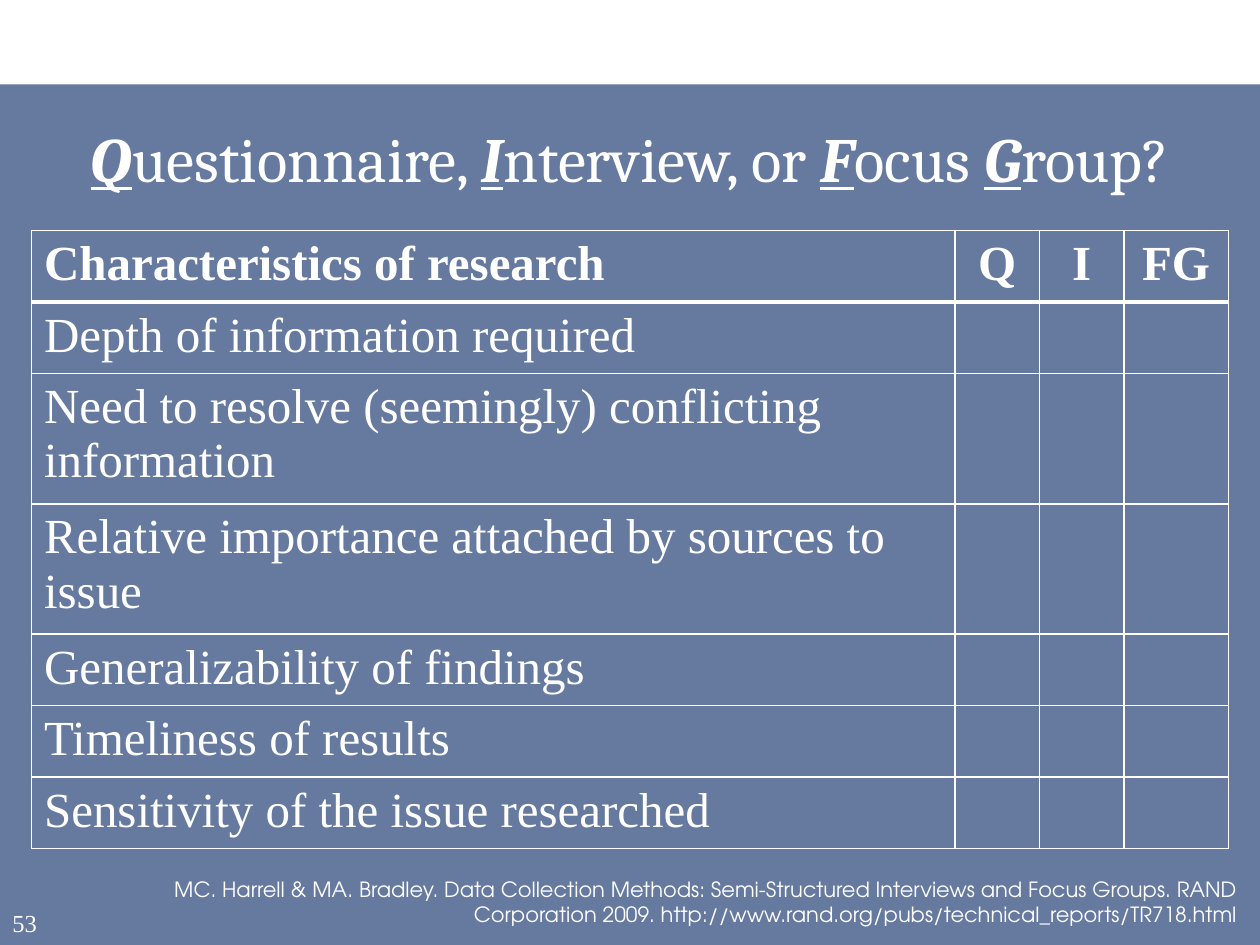
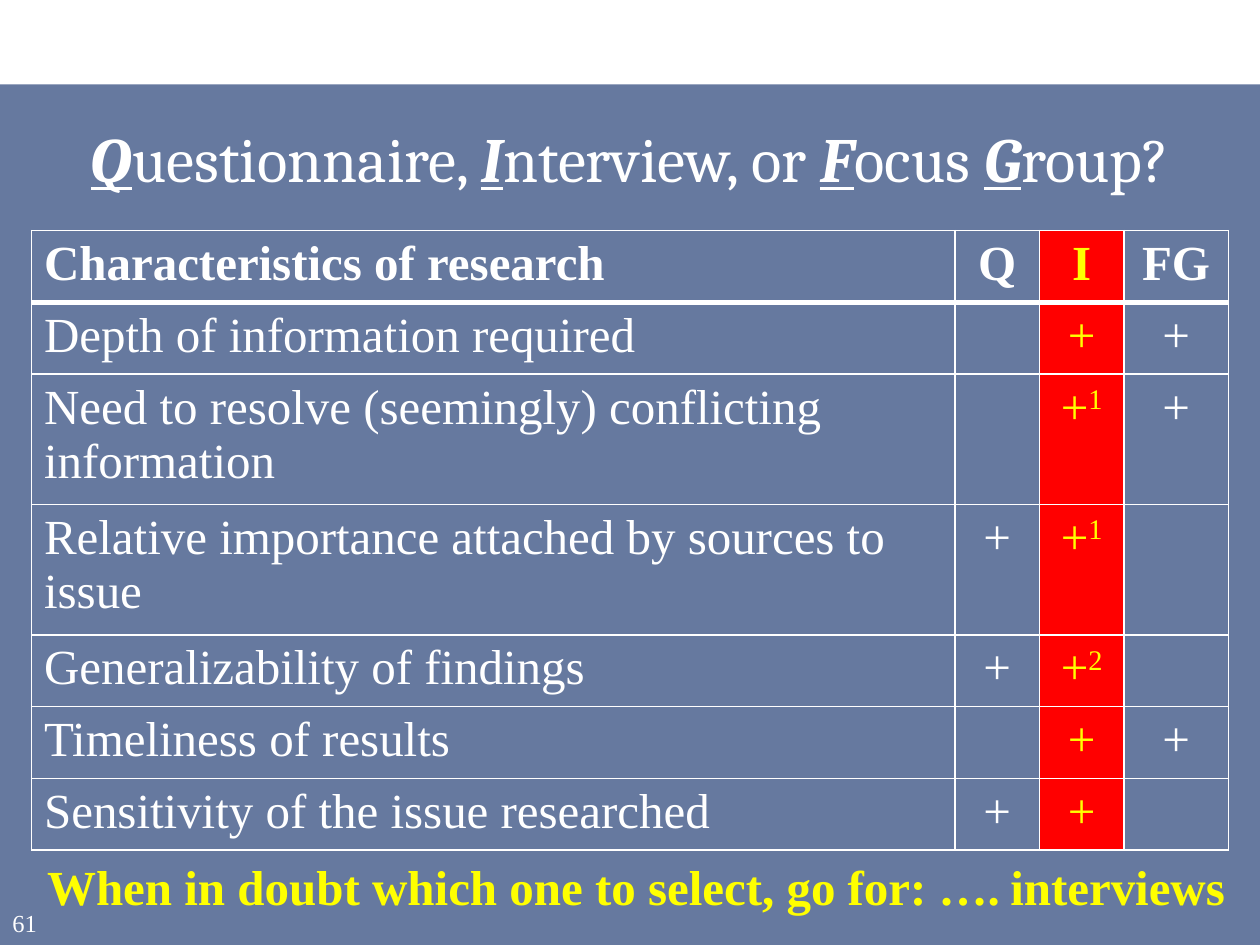
from lxml.etree import SubElement
from pptx import Presentation
from pptx.dml.color import RGBColor
from pptx.enum.shapes import MSO_SHAPE as SHAPE
from pptx.enum.text import MSO_ANCHOR as ANCHOR, PP_ALIGN as ALIGN
from pptx.oxml.ns import qn
from pptx.util import Inches, Pt

WHITE, YELLOW, RED, NAVY = "FFFFFF", "FFFF00", "FF0000", "002060"
SERIF, TITLE_FONT, SOURCE_FONT = "Times New Roman", "Cambria", "TeX Gyre Adventor"
TITLE = "*Q*uestionnaire, *I*nterview, or *F*ocus *G*roup?"
HEADER = ("Characteristics of research", "Q", "I", "FG")
TOPICS = (
    "Depth of information required",
    "Need to resolve (seemingly) conflicting information",
    "Relative importance attached by sources to issue",
    "Generalizability of findings",
    "Timeliness of results",
    "Sensitivity of the issue researched",
)
SCORES = (
    ("", "+", "+"),
    ("", "+^1", "+"),
    ("+", "+^1", ""),
    ("+", "+^2", ""),
    ("", "+", "+"),
    ("+", "+", ""),
)
COL_WIDTHS = (7.33, 0.67, 0.67, 0.83)
INTERVIEW_COL = 2
SOURCE = ("MC. Harrell & MA. Bradley. Data Collection Methods: Semi-Structured "
          "Interviews and Focus Groups. RAND Corporation 2009. "
          "http://www.rand.org/pubs/technical_reports/TR718.html")


def rgb(value):
    """Turn a hex string into a colour."""
    return RGBColor.from_string(value)


class Deck:
    """Hold the presentation style and the current slide."""

    def __init__(self):
        """Start an empty 10 by 7.5 inch presentation."""
        self.prs = Presentation()
        self.prs.slide_width, self.prs.slide_height = Inches(10), Inches(7.5)

    def slide(self, number):
        """Add a slide with its band, page number and title."""
        self.s = self.prs.slides.add_slide(self.prs.slide_layouts[6])
        self.band()
        self.text(str(number), 0, 7.16, 0.6, 0.34, size=14)
        self.title()

    def band(self):
        """Draw the translucent panel below the white strip."""
        sp = self.s.shapes.add_shape(SHAPE.RECTANGLE, 0, Inches(0.67), Inches(10), Inches(6.83))
        sp.shadow.inherit = False
        sp.fill.solid()
        sp.fill.fore_color.rgb = rgb(NAVY)
        color = sp._element.spPr.find(qn("a:solidFill"))[0]
        SubElement(color, qn("a:alpha"), val="60000")
        sp.line.fill.background()

    def font(self, p, size, color=WHITE, name=SERIF, bold=False):
        """Set the font of a whole paragraph."""
        f = p.font
        f.size, f.name, f.bold = Pt(size), name, bold
        f.color.rgb = rgb(color)

    def text(self, text, x, y, w, h, size, color=WHITE, name=SERIF, bold=False,
             align=ALIGN.LEFT, wrap=True):
        """Add a one-paragraph text box and return its frame."""
        tf = self.s.shapes.add_textbox(Inches(x), Inches(y), Inches(w), Inches(h)).text_frame
        tf.word_wrap = wrap
        p = tf.paragraphs[0]
        p.text, p.alignment = text, align
        self.font(p, size, color, name, bold)
        return tf

    def title(self):
        """Add the title with its starred initials emphasised."""
        tf = self.text("", 0, 0.83, 10, 0.83, 36, name=TITLE_FONT, align=ALIGN.CENTER)
        tf.vertical_anchor = ANCHOR.MIDDLE
        for i, part in enumerate(TITLE.split("*")):
            if part:
                r = tf.paragraphs[0].add_run()
                r.text = part
                if i % 2:
                    r.font.bold = r.font.italic = r.font.underline = True

    def borders(self, cell, top, bottom):
        """Give a cell white borders, with top and bottom widths in points."""
        tcPr = cell._tc.get_or_add_tcPr()
        for side, width in (("L", 1), ("R", 1), ("T", top), ("B", bottom)):
            ln = SubElement(tcPr, qn(f"a:ln{side}"), w=str(Pt(width)))
            SubElement(SubElement(ln, qn("a:solidFill")), qn("a:srgbClr"), val=WHITE)

    def cell(self, cell, text, row, col, highlight):
        """Fill one cell, raising whatever follows a caret."""
        self.borders(cell, 3 if row == 1 else 1, 3 if row == 0 else 1)
        if highlight:
            cell.fill.solid()
            cell.fill.fore_color.rgb = rgb(RED)
        else:
            cell.fill.background()
        p = cell.text_frame.paragraphs[0]
        p.alignment = ALIGN.CENTER if col else ALIGN.LEFT
        self.font(p, 28, YELLOW if highlight else WHITE, bold=row == 0)
        base, _, note = text.partition("^")
        if base:
            p.add_run().text = base
        if note:
            r = p.add_run()
            r.text = note
            r._r.get_or_add_rPr().set("baseline", "30000")

    def table(self, scores, header_h, single_h, double_h, highlight=None):
        """Add the comparison table, optionally highlighting a column."""
        rows = [HEADER] + [(topic, *marks) for topic, marks in zip(TOPICS, scores)]
        heights = [header_h, single_h, double_h, double_h] + [single_h] * 3
        table = self.s.shapes.add_table(len(rows), len(HEADER), Inches(0.25), Inches(1.83),
                                        Inches(9.5), Inches(sum(heights))).table
        table.first_row = table.horz_banding = False
        for column, width in zip(table.columns, COL_WIDTHS):
            column.width = Inches(width)
        for i, (values, height) in enumerate(zip(rows, heights)):
            table.rows[i].height = Inches(height)
            for j, value in enumerate(values):
                self.cell(table.cell(i, j), value, i, j, j == highlight)


def main():
    """Build both slides and save them."""
    deck = Deck()

    deck.slide(53)
    deck.table([("", "", "")] * len(TOPICS), 0.53, 0.55, 0.96)
    deck.text(SOURCE, 0.42, 6.91, 9.5, 0.5, 12, name=SOURCE_FONT, align=ALIGN.RIGHT)

    deck.slide(61)
    deck.table(SCORES, 0.57, 0.57, 1.03, highlight=INTERVIEW_COL)
    for text, x, w in (("When in doubt which one to select, go for: ….", 0.23, 7.85),
                       ("interviews", 7.91, 1.92)):
        deck.text(text, x, 6.75, w, 0.57, 28, YELLOW, bold=True,
                  align=ALIGN.CENTER, wrap=False)

    deck.prs.save("out.pptx")


if __name__ == "__main__":
    main()
